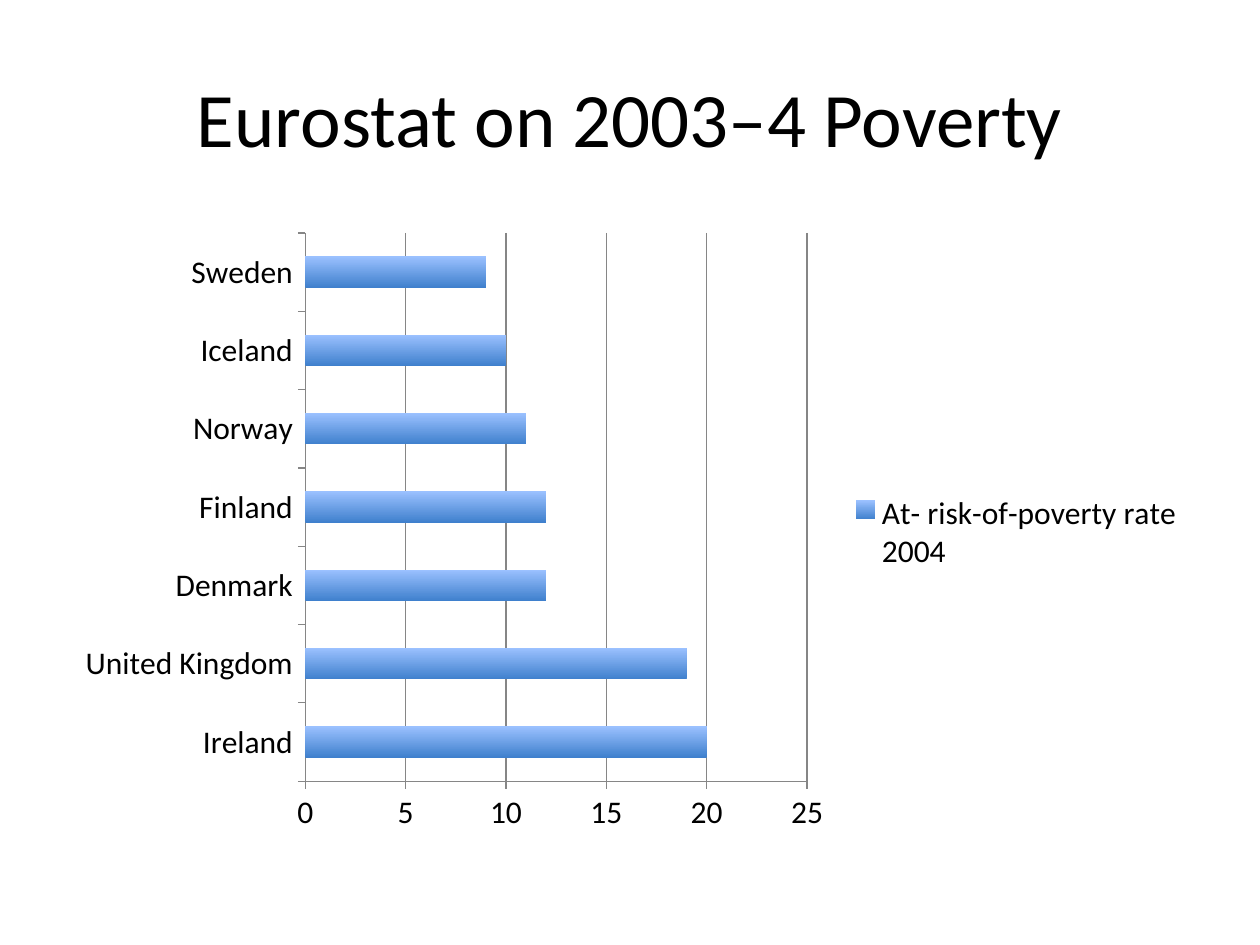
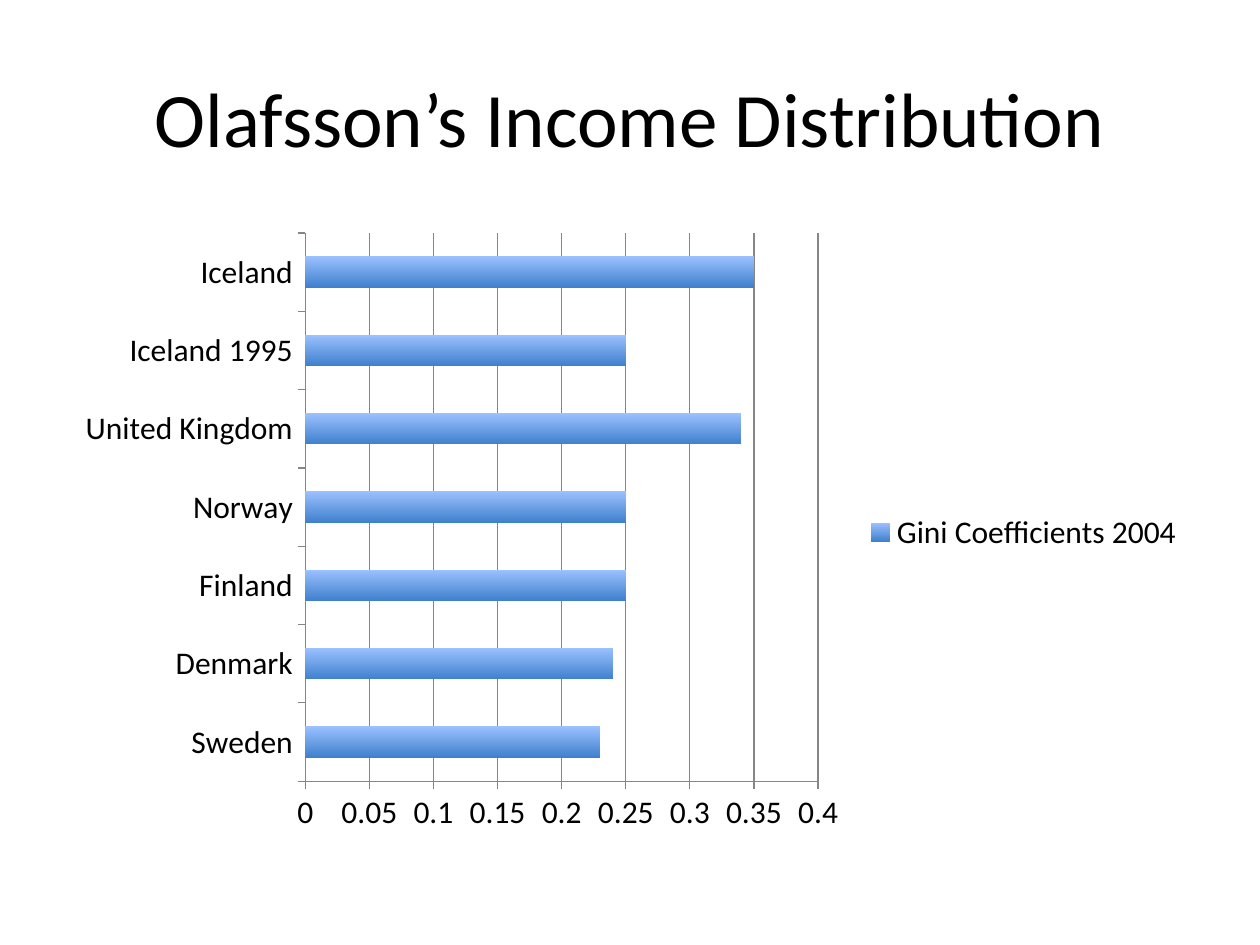
from pptx import Presentation
from pptx.chart.data import CategoryChartData
from pptx.dml.color import RGBColor
from pptx.enum.chart import XL_CHART_TYPE, XL_LEGEND_POSITION, XL_TICK_MARK
from pptx.enum.text import MSO_ANCHOR, PP_ALIGN
from pptx.util import Inches, Pt

BAR_CHART = XL_CHART_TYPE.BAR_CLUSTERED
LEGEND_RIGHT = XL_LEGEND_POSITION.RIGHT
TICK_OUT = XL_TICK_MARK.OUTSIDE
MIDDLE = MSO_ANCHOR.MIDDLE
CENTER = PP_ALIGN.CENTER

FONT = "Calibri"
COLORS = {
    "background": "FFFFFF",
    "text": "000000",
    "axis": "868686",
    "bar_bottom": "3F80CD",
    "bar_top": "9BC1FF",
}
LEFT, WIDTH = Inches(0.5), Inches(9)
TITLE_ONLY = 5

CHART_PAGES = [
    {
        "title": "Eurostat on 2003–4 Poverty",
        "series": "At- risk-of-poverty rate 2004",
        "values": {
            "Ireland": 20, "United Kingdom": 19, "Denmark": 12, "Finland": 12,
            "Norway": 11, "Iceland": 10, "Sweden": 9,
        },
        "maximum": 25,
        "step": 5,
    },
    {
        "title": "Olafsson’s Income Distribution",
        "series": "Gini Coefficients 2004",
        "values": {
            "Sweden": 0.23, "Denmark": 0.24, "Finland": 0.25, "Norway": 0.25,
            "United Kingdom": 0.34, "Iceland 1995": 0.25, "Iceland": 0.35,
        },
        "maximum": 0.4,
        "step": 0.05,
    },
]


def color(name):
    return RGBColor.from_string(COLORS[name])


def write_text(frame, text, size=44, align=CENTER, anchor=MIDDLE):
    frame.word_wrap = True
    frame.vertical_anchor = anchor
    para = frame.paragraphs[0]
    para.alignment = align
    span = para.add_run()
    span.text = text
    span.font.name = FONT
    span.font.size = Pt(size)
    span.font.color.rgb = color("text")


deck = Presentation()
deck.slide_width, deck.slide_height = Inches(10), Inches(7.5)

# Shared background
background = deck.slide_master.background.fill
background.solid()
background.fore_color.rgb = color("background")

for content in CHART_PAGES:
    page = deck.slides.add_slide(deck.slide_layouts[TITLE_ONLY])

    # Title
    title = page.shapes.title
    title.left, title.top = LEFT, Inches(0.3)
    title.width, title.height = WIDTH, Inches(1.25)
    write_text(title.text_frame, content["title"])

    # Chart with its data
    data = CategoryChartData()
    data.categories = list(content["values"])
    data.add_series(content["series"], list(content["values"].values()))
    chart = page.shapes.add_chart(
        BAR_CHART, LEFT, Inches(1.75), WIDTH, Inches(4.95), data
    ).chart
    chart.has_title = False
    chart.font.name = FONT
    chart.font.size = Pt(18)
    chart.font.color.rgb = color("text")

    # Legend
    chart.has_legend = True
    chart.legend.position = LEGEND_RIGHT
    chart.legend.include_in_layout = False

    # Axes and gridlines
    value_axis = chart.value_axis
    value_axis.minimum_scale = 0
    value_axis.maximum_scale = content["maximum"]
    value_axis.major_unit = content["step"]
    value_axis.has_major_gridlines = True
    chart.category_axis.has_major_gridlines = False
    for axis in (chart.category_axis, value_axis):
        axis.major_tick_mark = TICK_OUT
    for owner in (chart.category_axis, value_axis, value_axis.major_gridlines):
        owner.format.line.color.rgb = color("axis")
        owner.format.line.width = Pt(0.75)

    # Bars shaded from bottom to top
    plot = chart.plots[0]
    plot.gap_width = 150
    plot.vary_by_categories = False
    bars = plot.series[0]
    bars.invert_if_negative = False
    fill = bars.format.fill
    fill.gradient()
    fill.gradient_angle = 90
    for stop, name in zip(fill.gradient_stops, ("bar_bottom", "bar_top")):
        stop.color.rgb = color(name)

deck.save("out.pptx")
